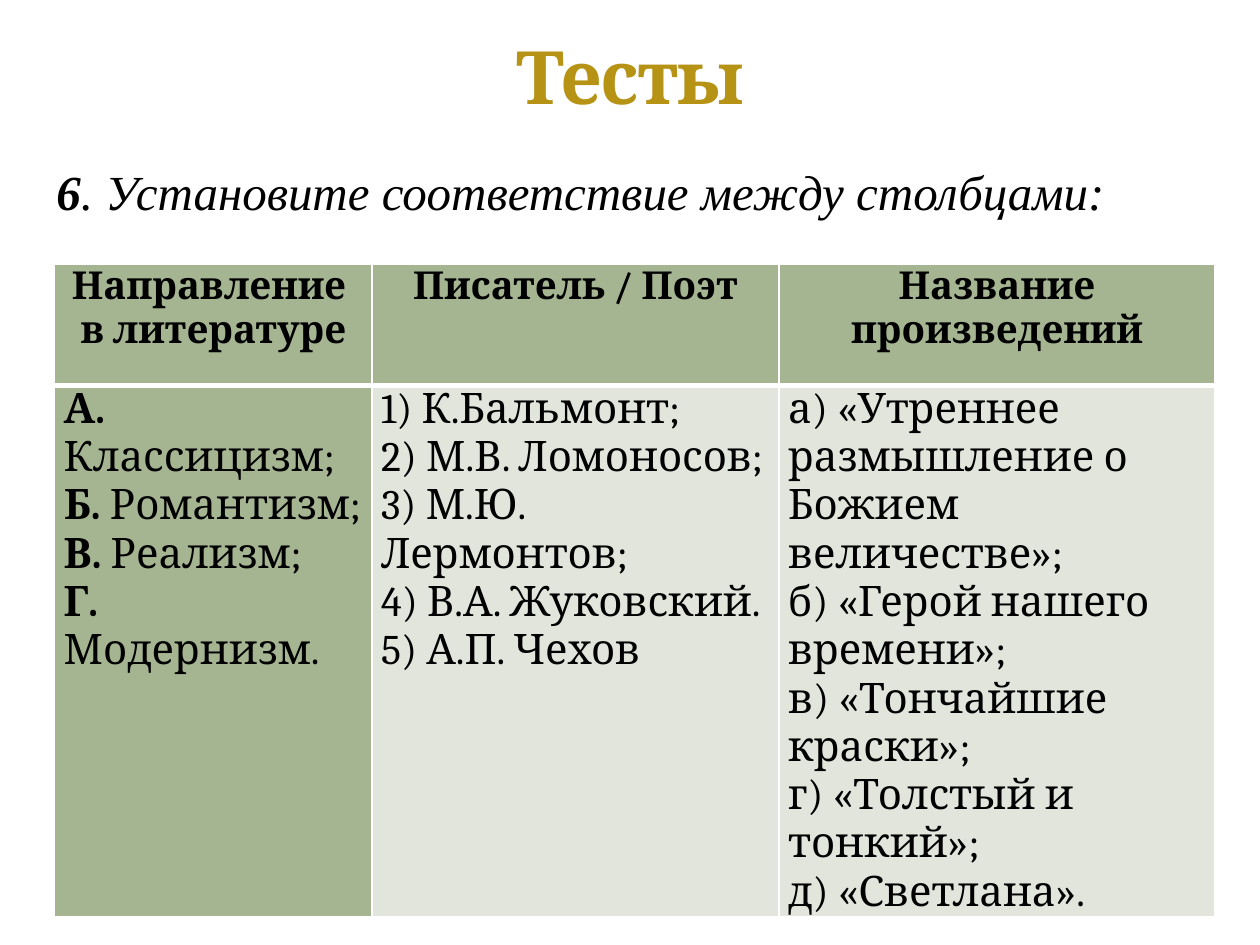
"""Build a quiz slide that matches literary movements, writers and works."""
from lxml.etree import SubElement
from pptx import Presentation
from pptx.dml.color import RGBColor
from pptx.enum.text import MSO_ANCHOR, MSO_AUTO_SIZE, PP_ALIGN
from pptx.oxml.ns import qn
from pptx.util import Pt

BLACK = RGBColor(0x00, 0x00, 0x00)
WHITE = RGBColor(0xFF, 0xFF, 0xFF)
GOLD = RGBColor(0xB7, 0x93, 0x15)
GREEN = RGBColor(0xA5, 0xB5, 0x92)
PALE_GREEN = RGBColor(0xE1, 0xE5, 0xDC)

HEADING = "Тесты"
TASK = [("6", True), (". Установите соответствие между столбцами:", False)]
HEADERS = [
    ["Направление ", "в литературе"],
    ["Писатель / Поэт"],
    ["Название произведений"],
]
MOVEMENTS = [
    ("А. ", "Классицизм;"),
    ("Б.", " Романтизм;"),
    ("В.", " Реализм;"),
    ("Г.", " Модернизм."),
]
WRITERS = [
    "1) К.Бальмонт;",
    "2) М.В. Ломоносов;",
    "3) М.Ю. Лермонтов;",
    "4) В.А. Жуковский.",
    "5) А.П. Чехов",
]
WORKS = [
    "а) «Утреннее размышление о Божием величестве»;",
    "б) «Герой нашего времени»;",
    "в) «Тончайшие краски»;",
    "г) «Толстый и тонкий»;",
    "д) «Светлана».",
]
COLUMN_WIDTHS = [181.4, 232.6, 249.1]
ROW_HEIGHTS = [69, 265]


def write(frame, paragraphs, size, align, font="Cambria", color=BLACK, italic=None):
    """Fill a text frame with paragraphs given as lists of (text, bold) runs."""
    for index, runs in enumerate(paragraphs):
        paragraph = frame.paragraphs[0] if index == 0 else frame.add_paragraph()
        paragraph.alignment = align
        for text, bold in runs:
            run = paragraph.add_run()
            run.text = text
            run.font.name = font
            run.font.size = Pt(size)
            run.font.bold = bold
            run.font.italic = italic
            run.font.color.rgb = color


def set_borders(cell, widths):
    """Draw white cell borders with the given width for each side."""
    properties = cell._tc.get_or_add_tcPr()
    for side, width in widths.items():
        line = SubElement(properties, qn(f"a:ln{side}"), w=str(Pt(width)))
        fill = SubElement(line, qn("a:solidFill"))
        SubElement(fill, qn("a:srgbClr"), val=str(WHITE))


def add_heading(slide):
    """Place and format the slide title."""
    title = slide.shapes.title
    title.left, title.top, title.width, title.height = Pt(36), Pt(12), Pt(648), Pt(60)
    frame = title.text_frame
    frame.vertical_anchor = MSO_ANCHOR.BOTTOM
    frame.auto_size = MSO_AUTO_SIZE.NONE
    write(frame, [[(HEADING, True)]], 42, PP_ALIGN.CENTER, color=GOLD)
    frame.paragraphs[0].runs[0].font._element.set("spc", "-100")


def add_task(slide):
    """Add the wording of the task."""
    task = slide.shapes.add_textbox(Pt(25.2), Pt(88.5), Pt(657.4), Pt(41))
    frame = task.text_frame
    frame.word_wrap = True
    frame.vertical_anchor = MSO_ANCHOR.MIDDLE
    write(frame, [TASK], 28, PP_ALIGN.JUSTIFY, "Times New Roman", italic=True)


def add_matching_table(slide):
    """Add the table with the three columns to match."""
    table = slide.shapes.add_table(
        2, 3, Pt(31.2), Pt(151.2), Pt(sum(COLUMN_WIDTHS)), Pt(sum(ROW_HEIGHTS))
    ).table
    table.horz_banding = False
    for column, width in zip(table.columns, COLUMN_WIDTHS):
        column.width = Pt(width)
    for row, height in zip(table.rows, ROW_HEIGHTS):
        row.height = Pt(height)

    headers = [[[(line, True)] for line in header] for header in HEADERS]
    bodies = [
        [[(letter, True), (name, False)] for letter, name in MOVEMENTS],
        [[(writer, False)] for writer in WRITERS],
        [[(work, False)] for work in WORKS],
    ]
    body_aligns = [PP_ALIGN.JUSTIFY, PP_ALIGN.LEFT, PP_ALIGN.LEFT]
    rows = [
        (headers, 22, [PP_ALIGN.CENTER] * 3, [GREEN] * 3, {"L": 1, "R": 1, "T": 1, "B": 3}),
        (bodies, 24, body_aligns, [GREEN, PALE_GREEN, PALE_GREEN], {"L": 1, "R": 1, "T": 3, "B": 1}),
    ]
    for row, (contents, size, aligns, fills, borders) in enumerate(rows):
        for column, (content, align, color) in enumerate(zip(contents, aligns, fills)):
            cell = table.cell(row, column)
            cell.margin_left = cell.margin_right = Pt(5.2)
            cell.margin_top = cell.margin_bottom = 0
            set_borders(cell, borders)
            cell.fill.solid()
            cell.fill.fore_color.rgb = color
            write(cell.text_frame, content, size, align)


def main():
    """Assemble and save the slide."""
    presentation = Presentation()
    presentation.slide_width, presentation.slide_height = Pt(720), Pt(540)
    slide = presentation.slides.add_slide(presentation.slide_layouts[5])
    add_matching_table(slide)
    add_heading(slide)
    add_task(slide)
    presentation.save("out.pptx")


if __name__ == "__main__":
    main()
